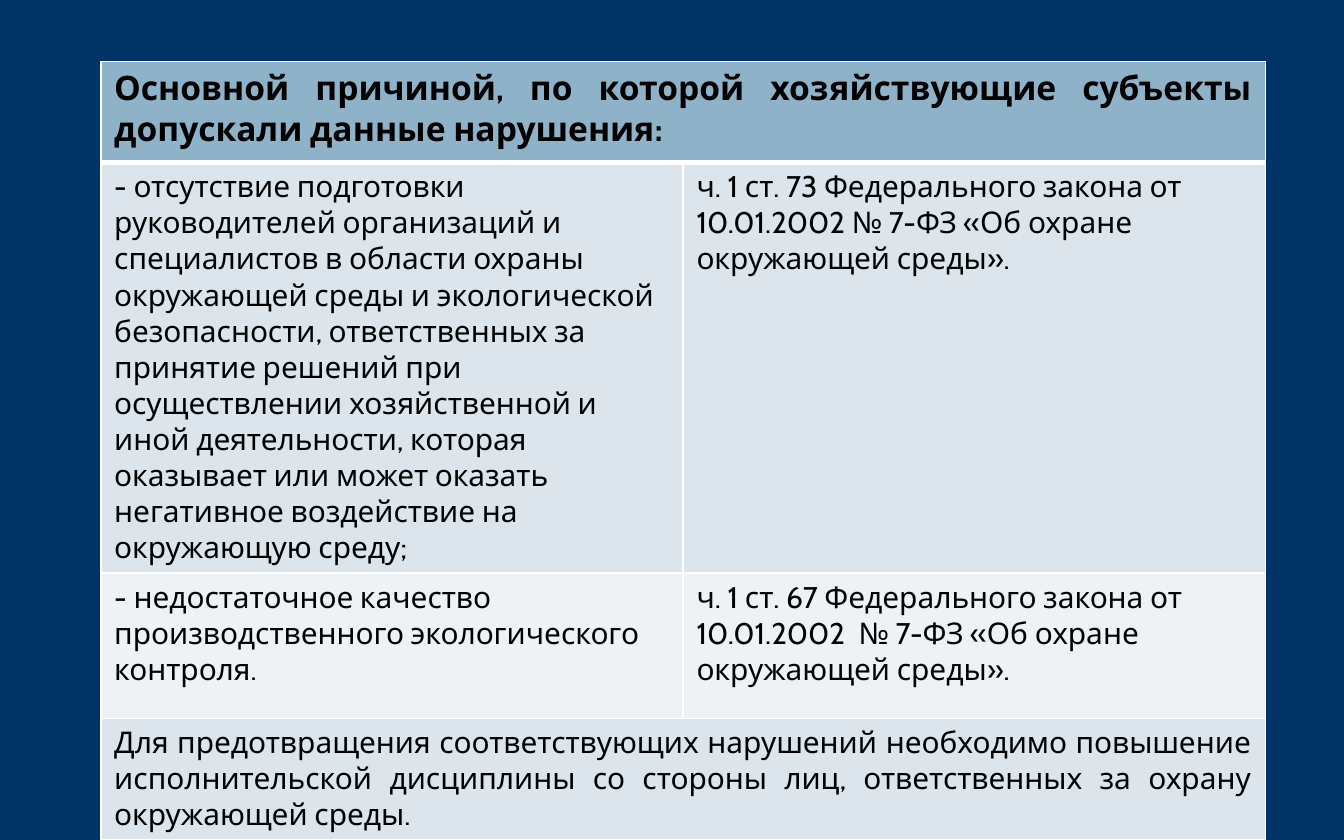
"""Build a slide with a table of violation causes and the laws they breach."""
from lxml import etree
from pptx import Presentation
from pptx.dml.color import RGBColor
from pptx.enum import text
from pptx.oxml import ns
from pptx.util import Pt

BACK, INK, EDGE = "003366", "000000", "FFFFFF"
HEAD, DARK, PALE = "8EB3C8", "DBE5EB", "EEF2F5"
FONT = "Cabin"
LEFT, TOP, WIDTH = 54, 33, 624
ROWS = [
    (54, HEAD, ["Основной причиной, по которой хозяйствующие субъекты допускали данные нарушения:"]),
    (186, DARK, [
        "- отсутствие подготовки руководителей организаций и специалистов в области охраны "
        "окружающей среды и экологической безопасности, ответственных за принятие решений "
        "при осуществлении хозяйственной и иной деятельности, которая оказывает или может "
        "оказать негативное воздействие на окружающую среду;",
        "ч. 1 ст. 73 Федерального закона от 10.01.2002 № 7-ФЗ «Об охране окружающей среды».",
    ]),
    (78, PALE, [
        "- недостаточное качество производственного экологического контроля.",
        "ч. 1 ст. 67 Федерального закона от 10.01.2002  № 7-ФЗ «Об охране окружающей среды».",
    ]),
    (29.5, DARK, [
        "Для предотвращения соответствующих нарушений необходимо повышение исполнительской "
        "дисциплины со стороны лиц, ответственных за охрану окружающей среды.",
    ]),
]


def paint(fill, tone):
    fill.solid()
    fill.fore_color.rgb = RGBColor.from_string(tone)


def frame(cell, sides):
    props = cell._tc.get_or_add_tcPr()
    for spot, (side, size) in enumerate(sides.items()):
        line = etree.Element(ns.qn(f"a:ln{side}"), w=str(Pt(size)))
        solid = etree.SubElement(line, ns.qn("a:solidFill"))
        etree.SubElement(solid, ns.qn("a:srgbClr"), val=EDGE)
        props.insert(spot, line)


def write(cell, words, head, wide):
    para = cell.text_frame.paragraphs[0]
    para.alignment = text.PP_ALIGN.JUSTIFY if wide else text.PP_ALIGN.LEFT
    run = para.add_run()
    run.text = words
    run.font.name = FONT
    run.font.size = Pt(18 if head else 16)
    run.font.bold = head
    run.font.color.rgb = RGBColor.from_string(INK)


def main():
    deck = Presentation()
    deck.slide_width, deck.slide_height = Pt(720), Pt(450)
    slide = deck.slides.add_slide(deck.slide_layouts[6])
    paint(slide.background.fill, BACK)
    high = sum(row[0] for row in ROWS)
    table = slide.shapes.add_table(
        len(ROWS), 2, Pt(LEFT), Pt(TOP), Pt(WIDTH), Pt(high)).table
    table.first_row = table.horz_banding = False
    for col in table.columns:
        col.width = Pt(WIDTH / 2)
    for i, (tall, tone, words) in enumerate(ROWS):
        table.rows[i].height = Pt(tall)
        wide = len(words) == 1
        for j in range(2):
            cell = table.cell(i, j)
            paint(cell.fill, tone)
            frame(cell, {"L": 1, "R": 1, "T": 3 if i == 1 else 1, "B": 3 if i == 0 else 1})
        if wide:
            table.cell(i, 0).merge(table.cell(i, 1))
        for j, part in enumerate(words):
            write(table.cell(i, j), part, i == 0, wide)
    deck.save("out.pptx")


if __name__ == "__main__":
    main()
